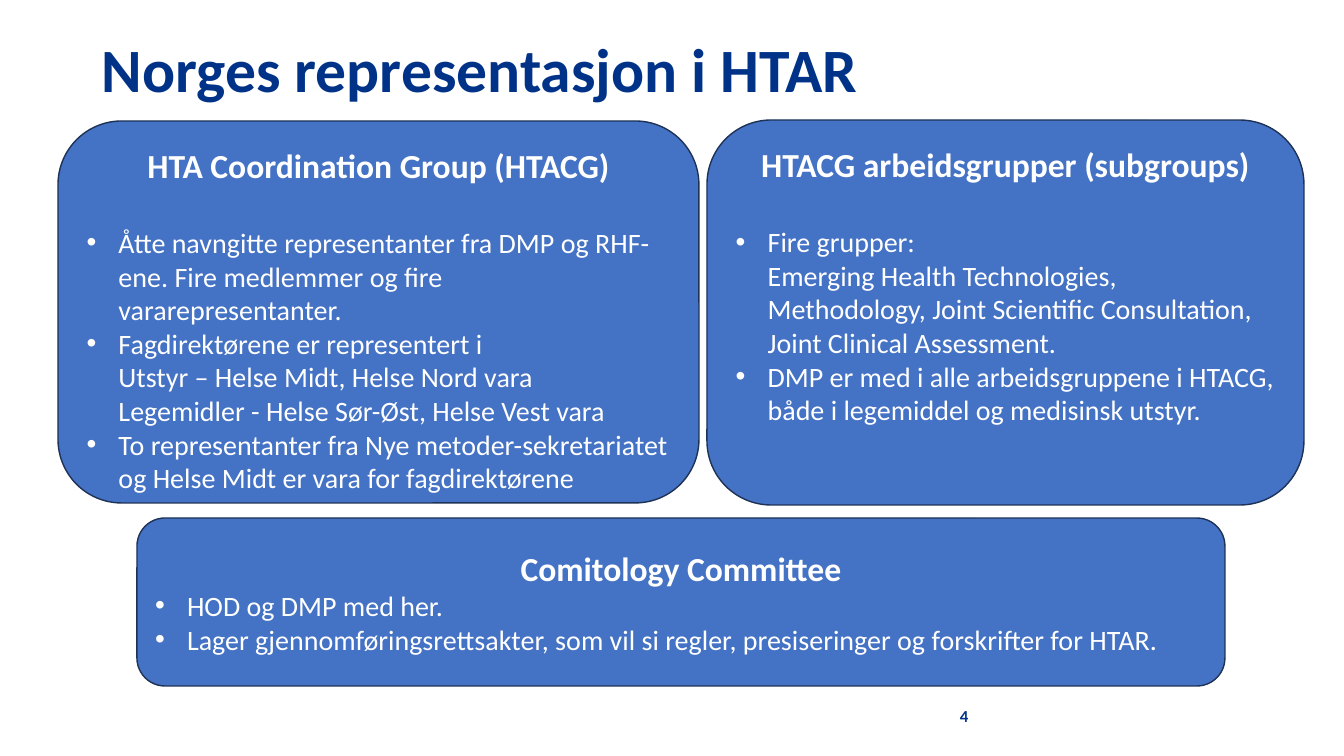
from lxml import etree
from pptx import Presentation
from pptx.dml.color import RGBColor
from pptx.enum.shapes import MSO_SHAPE
from pptx.enum.text import MSO_ANCHOR, PP_ALIGN
from pptx.oxml.ns import qn
from pptx.util import Pt

SCALE = 12192000 / 1344  # EMU per px
ROUND = MSO_SHAPE.ROUNDED_RECTANGLE
TOP, MIDDLE = MSO_ANCHOR.TOP, MSO_ANCHOR.MIDDLE
LEFT, CENTER = PP_ALIGN.LEFT, PP_ALIGN.CENTER


def px(*sizes):
    return [round(size * SCALE) for size in sizes]


def color(code):
    return RGBColor.from_string(code)


def write(para, text, size=20, ink="FFFFFF", bold=False, align=LEFT,
          font="Calibri", after=0, lines=None, bullet=False):
    """Fill one paragraph; a newline in the text is a line break."""
    if bullet:
        props = para._p.get_or_add_pPr()
        indent = px(32)[0]
        props.set("marL", str(indent))
        props.set("indent", str(-indent))
        etree.SubElement(props, qn("a:buFont"), typeface="Arial")
        etree.SubElement(props, qn("a:buChar"), char="•")
    para.text = text
    para.alignment = align
    para.space_after = Pt(after)
    if lines:
        para.line_spacing = lines
    for run in para.runs:
        run.font.name = font
        run.font.size = Pt(size)
        run.font.bold = bold
        run.font.color.rgb = color(ink)


class Deck:
    navy, fill, edge = "003388", "4472C4", "1E3256"

    def __init__(self):
        self.prs = Presentation()
        self.prs.slide_width, self.prs.slide_height = px(1344, 756)
        self.slide = self.prs.slides.add_slide(self.prs.slide_layouts[6])

    def label(self, area, text, anchor=TOP, **style):
        frame = self.slide.shapes.add_textbox(*px(*area)).text_frame
        frame.word_wrap = True
        frame.vertical_anchor = anchor
        write(frame.paragraphs[0], text, ink=self.navy, bold=True, **style)

    def panel(self, area, head, items, anchor=TOP, gap=0):
        shape = self.slide.shapes.add_shape(ROUND, *px(*area))
        shape.shadow.inherit = False
        shape.fill.solid()
        shape.fill.fore_color.rgb = color(self.fill)
        shape.line.color.rgb = color(self.edge)
        shape.line.width = Pt(1)
        frame = shape.text_frame
        frame.word_wrap = True
        frame.vertical_anchor = anchor
        write(frame.paragraphs[0], head, size=24, bold=True, align=CENTER,
              after=gap)
        for item in items:
            write(frame.add_paragraph(), item, bullet=True)


def main():
    deck = Deck()

    # Title and page number
    deck.label((92, 0, 1159, 146), "Norges representasjon i HTAR", MIDDLE,
               size=44, lines=0.9)
    deck.label((950, 701, 302, 40), "4", size=12)

    # Coordination group
    deck.panel((58, 121, 641, 382), "HTA Coordination Group (HTACG)", [
        "Åtte navngitte representanter fra DMP og RHF-ene. "
        "Fire medlemmer og fire vararepresentanter.",
        "Fagdirektørene er representert i\n"
        "Utstyr – Helse Midt, Helse Nord vara\n"
        "Legemidler - Helse Sør-Øst, Helse Vest vara",
        "To representanter fra Nye metoder-sekretariatet "
        "og Helse Midt er vara for fagdirektørene",
    ], gap=29)

    # Committee
    deck.panel((137, 518, 1088, 168), "Comitology Committee", [
        "HOD og DMP med her.",
        "Lager gjennomføringsrettsakter, som vil si regler, "
        "presiseringer og forskrifter for HTAR.",
    ], MIDDLE)

    # Subgroups
    deck.panel((707, 120, 597, 385), "HTACG arbeidsgrupper (subgroups)", [
        "Fire grupper:\n"
        "Emerging Health Technologies, Methodology, Joint Scientific "
        "Consultation, Joint Clinical Assessment.",
        "DMP er med i alle arbeidsgruppene i HTACG, "
        "både i legemiddel og medisinsk utstyr.",
    ], gap=29)

    deck.prs.save("out.pptx")


if __name__ == "__main__":
    main()
